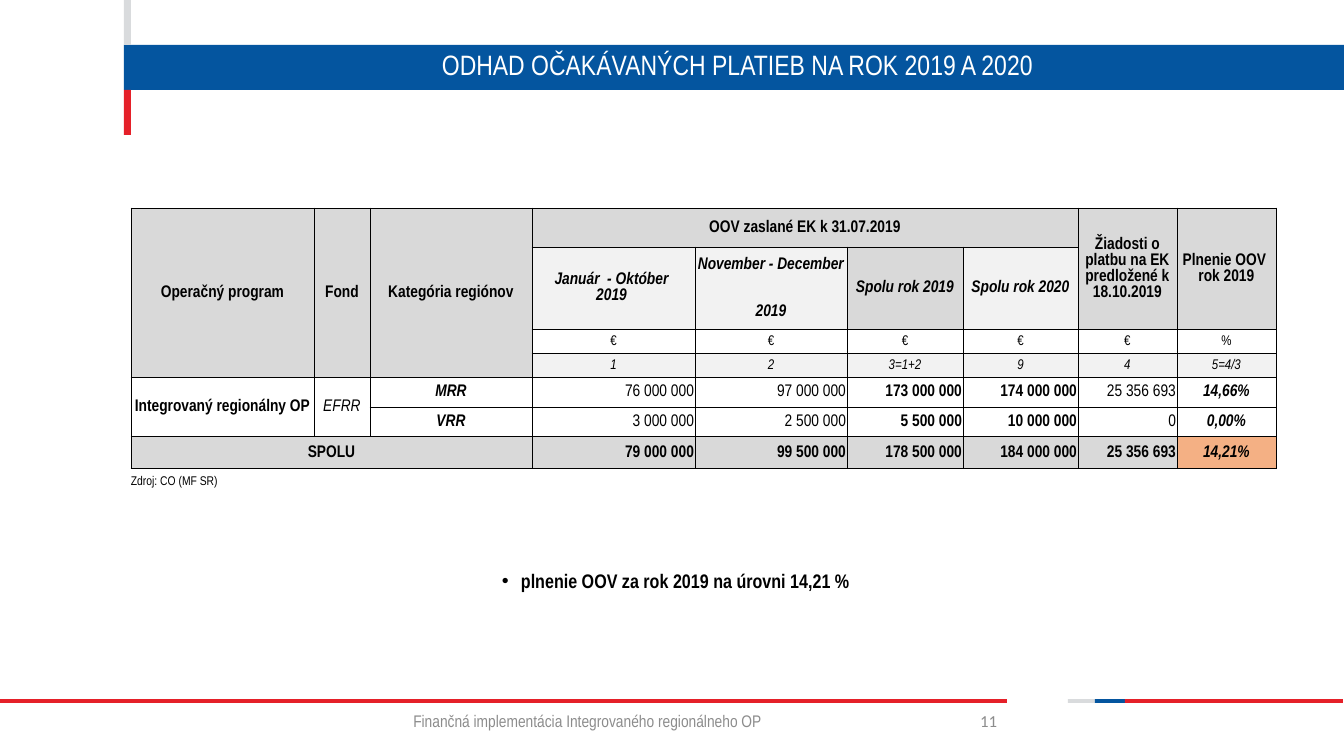
from dataclasses import dataclass

from lxml import etree
from pptx import Presentation
from pptx.dml.color import RGBColor
from pptx.enum.shapes import MSO_SHAPE
from pptx.enum.text import MSO_ANCHOR, PP_ALIGN
from pptx.oxml.ns import qn
from pptx.util import Emu, Pt

RECTANGLE = MSO_SHAPE.RECTANGLE
TOP, MIDDLE = MSO_ANCHOR.TOP, MSO_ANCHOR.MIDDLE
LEFT, CENTER, RIGHT = PP_ALIGN.LEFT, PP_ALIGN.CENTER, PP_ALIGN.RIGHT
EMU_PER_PX = 914400 / 100.8


@dataclass(frozen=True)
class Theme:
    font: str = "Arial Narrow"
    number_font: str = "Calibri"
    blue: str = "04559F"
    red: str = "E52029"
    silver: str = "D9DBDD"
    white: str = "FFFFFF"
    black: str = "000000"
    footer: str = "8C8C8C"
    header: str = "D9D9D9"
    pale: str = "F2F2F2"
    highlight: str = "F4B084"
    title_size: int = 20
    bullet_size: int = 14
    body_size: int = 12
    unit_size: int = 10
    source_size: int = 9


THEME = Theme()

# Payments table: None marks a cell covered by a merge
COLUMN_WIDTHS = [183, 56, 162, 163, 152, 116, 115, 99, 99]
ROW_HEIGHTS = [39, 82, 24, 24, 30, 30, 32]
PAYMENTS = [
    ["Operačný program", "Fond", "Kategória regiónov", "OOV zaslané EK k 31.07.2019",
     None, None, None, "Žiadosti o platbu na EK predložené k 18.10.2019",
     "Plnenie OOV \nrok 2019"],
    [None, None, None, "Január  - Október \n2019 ", "November - December \n2019",
     "Spolu rok 2019", "Spolu rok 2020", None, None],
    [None, None, None, "€", "€", "€", "€", "€", "%"],
    [None, None, None, "1", "2", "3=1+2", "9", "4", "5=4/3"],
    ["Integrovaný regionálny OP", "EFRR", "MRR", "76 000 000", "97 000 000",
     "173 000 000", "174 000 000", "25 356 693", "14,66%"],
    [None, None, "VRR", "3 000 000", "2 500 000", "5 500 000", "10 000 000", "0", "0,00%"],
    ["SPOLU", None, None, "79 000 000", "99 500 000", "178 500 000", "184 000 000",
     "25 356 693", "14,21%"],
]
# First and last cell of each merge, as (row, column)
MERGES = [((0, 0), (3, 0)), ((0, 1), (3, 1)), ((0, 2), (3, 2)), ((0, 3), (0, 6)),
          ((0, 7), (1, 7)), ((0, 8), (1, 8)), ((4, 0), (5, 0)), ((4, 1), (5, 1)),
          ((6, 0), (6, 2))]
# One letter per column: b bold, i italic, x both, n neither
ROW_STYLES = ["bbbbbbbbb", "bbbxxxxbb", "bbbnnnnnn", "bbbiiiiii",
              "bixnnbbnx", "bixnnbbnx", "bbbbbbbbx"]
# One letter per column: h header, p pale, o highlight, - none
ROW_FILLS = ["hhhhhhhhh", "hhhpphphh", "hhh------", "hhhpppppp",
             "---------", "---------", "hhhhhhhho"]
FILL_COLORS = {"h": THEME.header, "p": THEME.pale, "o": THEME.highlight}
AMOUNT_ROWS, AMOUNT_COLUMNS = range(4, 7), range(3, 8)


def px(length):
    return Emu(round(length * EMU_PER_PX))


def box_px(box):
    return [px(length) for length in box]


def rgb(color):
    return RGBColor.from_string(color)


def apply(target, values):
    for name, value in values.items():
        setattr(target, name, value)


def write(paragraph, text, color, size, font=THEME.font, bold=False, italic=False):
    paragraph.text = text
    for run in paragraph.runs:
        apply(run.font, {"name": font, "size": Pt(size), "bold": bold, "italic": italic})
        run.font.color.rgb = rgb(color)


def add_band(slide, box, color):
    band = slide.shapes.add_shape(RECTANGLE, *box_px(box))
    band.shadow.inherit = False
    band.fill.solid()
    band.fill.fore_color.rgb = rgb(color)
    band.line.fill.background()


def add_text(slide, box, text, color, size, align=LEFT, anchor=TOP, **style):
    frame = slide.shapes.add_textbox(*box_px(box)).text_frame
    apply(frame, {"word_wrap": True, "vertical_anchor": anchor})
    paragraph = frame.paragraphs[0]
    paragraph.alignment = align
    write(paragraph, text, color, size, **style)
    return paragraph


def add_bullet(paragraph, indent):
    properties = paragraph._p.get_or_add_pPr()
    properties.set("marL", str(px(indent)))
    properties.set("indent", str(-px(indent)))
    etree.SubElement(properties, qn("a:buFont"), typeface="Arial")
    etree.SubElement(properties, qn("a:buChar"), char="•")


def add_borders(cell):
    properties = cell._tc.get_or_add_tcPr()
    for side in ("a:lnL", "a:lnR", "a:lnT", "a:lnB"):
        line = etree.SubElement(properties, qn(side), w=str(Pt(0.5)))
        fill = etree.SubElement(line, qn("a:solidFill"))
        etree.SubElement(fill, qn("a:srgbClr"), val=THEME.black)


def format_cell(cell, row, column):
    apply(cell, {"margin_left": px(1), "margin_right": px(1), "margin_top": px(1),
                 "margin_bottom": 0, "vertical_anchor": MIDDLE})
    add_borders(cell)
    color = FILL_COLORS.get(ROW_FILLS[row][column])
    if color:
        cell.fill.solid()
        cell.fill.fore_color.rgb = rgb(color)
    else:
        cell.fill.background()
    text = PAYMENTS[row][column]
    if text is None:
        return
    paragraph = cell.text_frame.paragraphs[0]
    is_amount = row in AMOUNT_ROWS and column in AMOUNT_COLUMNS
    paragraph.alignment = RIGHT if is_amount else CENTER
    style = ROW_STYLES[row][column]
    size = THEME.unit_size if row in (2, 3) else THEME.body_size
    write(paragraph, text, THEME.black, size, bold=style in "bx", italic=style in "ix")


def add_payments_table(slide, left, top):
    box = (left, top, sum(COLUMN_WIDTHS), sum(ROW_HEIGHTS))
    table = slide.shapes.add_table(len(ROW_HEIGHTS), len(COLUMN_WIDTHS), *box_px(box)).table
    apply(table, {"first_row": False, "horz_banding": False})
    for column, width in zip(table.columns, COLUMN_WIDTHS):
        column.width = px(width)
    for row, height in zip(table.rows, ROW_HEIGHTS):
        row.height = px(height)
    for first, last in MERGES:
        table.cell(*first).merge(table.cell(*last))
    for row in range(len(ROW_HEIGHTS)):
        for column in range(len(COLUMN_WIDTHS)):
            format_cell(table.cell(row, column), row, column)


def main():
    presentation = Presentation()
    apply(presentation, {"slide_width": px(1344), "slide_height": px(756)})
    slide = presentation.slides.add_slide(presentation.slide_layouts[6])

    # Title band and footer rules
    for box, color in [
        ((124, 45, 1220, 45), THEME.blue),
        ((124, 90, 7, 45), THEME.red),
        ((124, 0, 7, 45), THEME.silver),
        ((0, 699, 1007, 4), THEME.red),
        ((1068, 699, 27, 4), THEME.silver),
        ((1095, 699, 30, 4), THEME.blue),
        ((1125, 699, 218, 4), THEME.red),
    ]:
        add_band(slide, box, color)

    # Title
    title = add_text(slide, (131, 45, 1213, 43), "ODHAD OČAKÁVANÝCH PLATIEB NA ROK 2019 A 2020",
                     THEME.white, THEME.title_size, CENTER, MIDDLE)
    title.line_spacing = 0.9

    # Payments and their source
    add_payments_table(slide, 131, 208)
    add_text(slide, (121, 468, 111, 25), "Zdroj: CO (MF SR)", THEME.black, THEME.source_size)

    # Conclusion
    conclusion = add_text(slide, (492, 564, 730, 40), "plnenie OOV za rok 2019 na úrovni 14,21 %",
                          THEME.black, THEME.bullet_size, bold=True)
    add_bullet(conclusion, 19)

    # Footer
    add_text(slide, (276, 701, 623, 40), "Finančná implementácia Integrovaného regionálneho OP",
             THEME.footer, THEME.body_size, CENTER, MIDDLE)
    add_text(slide, (919, 701, 88, 40), "11", THEME.footer, THEME.body_size, RIGHT, MIDDLE,
             font=THEME.number_font)

    presentation.save("out.pptx")


if __name__ == "__main__":
    main()
